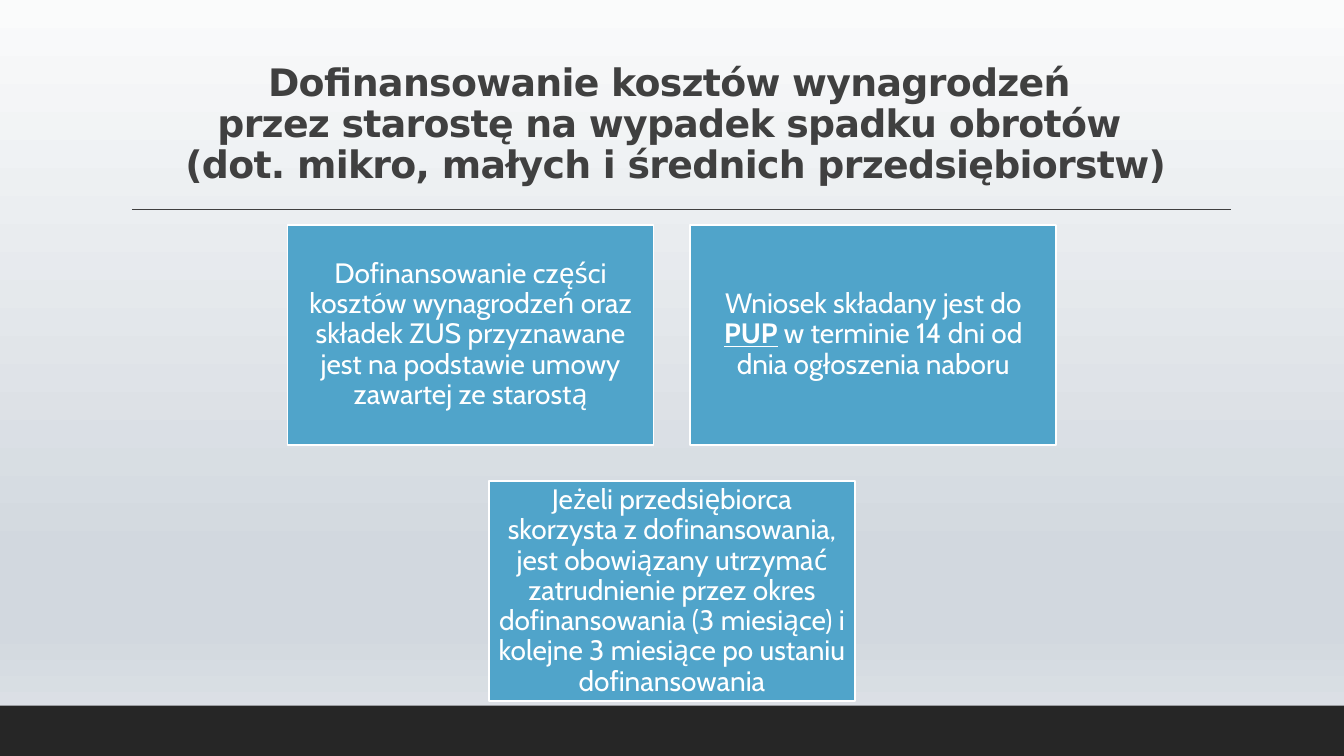
from lxml import etree
from pptx import Presentation
from pptx.dml.color import RGBColor
from pptx.enum.shapes import MSO_CONNECTOR as Connector, MSO_SHAPE as Shape
from pptx.enum.text import MSO_ANCHOR as Anchor, PP_ALIGN as Align
from pptx.oxml.ns import qn
from pptx.util import Pt

WHITE = RGBColor(0xFF, 0xFF, 0xFF)
BLUE = RGBColor(0x50, 0xA4, 0xCA)
DARK = RGBColor(0x40, 0x40, 0x40)
BLACK = RGBColor(0x26, 0x26, 0x26)
BACKGROUND_STOPS = [(0, "FAFBFB"), (74, "D2D8DF"), (83, "D2D8DF"), (100, "E1E5E9")]

PAGE_WIDTH, PAGE_HEIGHT = 960, 540
TILE_WIDTH, TILE_HEIGHT, TILE_GAP = 261.5, 157, 26.2
TILES_TOP = 160.6

TITLE = ("Dofinansowanie kosztów wynagrodzeń \v"
         "przez starostę na wypadek spadku obrotów \v"
         "(dot. mikro, małych i średnich przedsiębiorstw)")
# Each tile is a list of (text, emphasised) spans.
TILE_ROWS = [
    [
        [("Dofinansowanie części kosztów wynagrodzeń oraz składek ZUS "
          "przyznawane jest na podstawie umowy zawartej ze starostą", False)],
        [("Wniosek składany jest do ", False), ("PUP", True),
         (" w terminie 14 dni od dnia ogłoszenia naboru", False)],
    ],
    [
        [("Jeżeli przedsiębiorca skorzysta z dofinansowania, jest obowiązany "
          "utrzymać zatrudnienie przez okres dofinansowania (3 miesiące) "
          "i kolejne 3 miesiące po ustaniu dofinansowania", False)],
    ],
]


class SlideBuilder:
    title_font, title_size = "DejaVu Sans", 27
    tile_font, tile_size = "Cabin", 20

    def __init__(self, page):
        self.page = page

    def background(self, stops):
        fill = self.page.background.fill
        fill.gradient()
        fill.gradient_angle = 270
        stop_list = self.page.element.find(".//" + qn("a:gsLst"))
        for stop in list(stop_list):
            stop_list.remove(stop)
        for percent, color in stops:
            stop = etree.SubElement(stop_list, qn("a:gs"), pos=str(percent * 1000))
            etree.SubElement(stop, qn("a:srgbClr"), val=color)

    def rectangle(self, left, top, width, height, color, outline=None):
        box = self.page.shapes.add_shape(
            Shape.RECTANGLE, Pt(left), Pt(top), Pt(width), Pt(height))
        box.shadow.inherit = False
        box.fill.solid()
        box.fill.fore_color.rgb = color
        if outline is None:
            box.line.fill.background()
        else:
            box.line.color.rgb = outline
            box.line.width = Pt(1.25)
        return box

    def rule(self, left, right, top):
        line = self.page.shapes.add_connector(
            Connector.STRAIGHT, Pt(left), Pt(top), Pt(right), Pt(top))
        line.line.color.rgb = DARK
        line.line.width = Pt(1)
        etree.SubElement(line.element.spPr, qn("a:effectLst"))

    def style(self, para, font, size, color):
        para.alignment = Align.CENTER
        para.line_spacing = 0.9
        para.font.name = font
        para.font.size = Pt(size)
        para.font.color.rgb = color

    def title(self, text, left, top, width, height):
        box = self.page.shapes.add_textbox(Pt(left), Pt(top), Pt(width), Pt(height))
        frame = box.text_frame
        frame.word_wrap = True
        frame.vertical_anchor = Anchor.BOTTOM
        para = frame.paragraphs[0]
        para.text = text
        self.style(para, self.title_font, self.title_size, DARK)
        para.font.bold = True
        for span in para.runs:
            span.font._element.set("spc", "-50")

    def tile(self, spans, left, top):
        box = self.rectangle(left, top, TILE_WIDTH, TILE_HEIGHT, BLUE, WHITE)
        frame = box.text_frame
        frame.word_wrap = True
        frame.vertical_anchor = Anchor.MIDDLE
        frame.margin_left = frame.margin_right = Pt(6)
        frame.margin_top = frame.margin_bottom = Pt(6)
        para = frame.paragraphs[0]
        for text, emphasised in spans:
            span = para.add_run()
            span.text = text
            if emphasised:
                span.font.bold = span.font.underline = True
        self.style(para, self.tile_font, self.tile_size, WHITE)

    def tile_rows(self, rows, top):
        """Stack the rows downwards, each centred on the page."""
        for row_index, row in enumerate(rows):
            row_width = len(row) * (TILE_WIDTH + TILE_GAP) - TILE_GAP
            left = (PAGE_WIDTH - row_width) / 2
            for column, spans in enumerate(row):
                self.tile(spans, left + column * (TILE_WIDTH + TILE_GAP),
                          top + row_index * (TILE_HEIGHT + TILE_GAP))


def main():
    deck = Presentation()
    deck.slide_width, deck.slide_height = Pt(PAGE_WIDTH), Pt(PAGE_HEIGHT)
    builder = SlideBuilder(deck.slides.add_slide(deck.slide_layouts[6]))
    builder.background(BACKGROUND_STOPS)
    builder.rectangle(0, 504, PAGE_WIDTH, 36, BLACK)
    builder.rule(94.3, 879, 149.6)
    builder.title(TITLE, 86.4, 22.3, 792, 114.5)
    builder.tile_rows(TILE_ROWS, TILES_TOP)
    deck.save("out.pptx")


if __name__ == "__main__":
    main()
